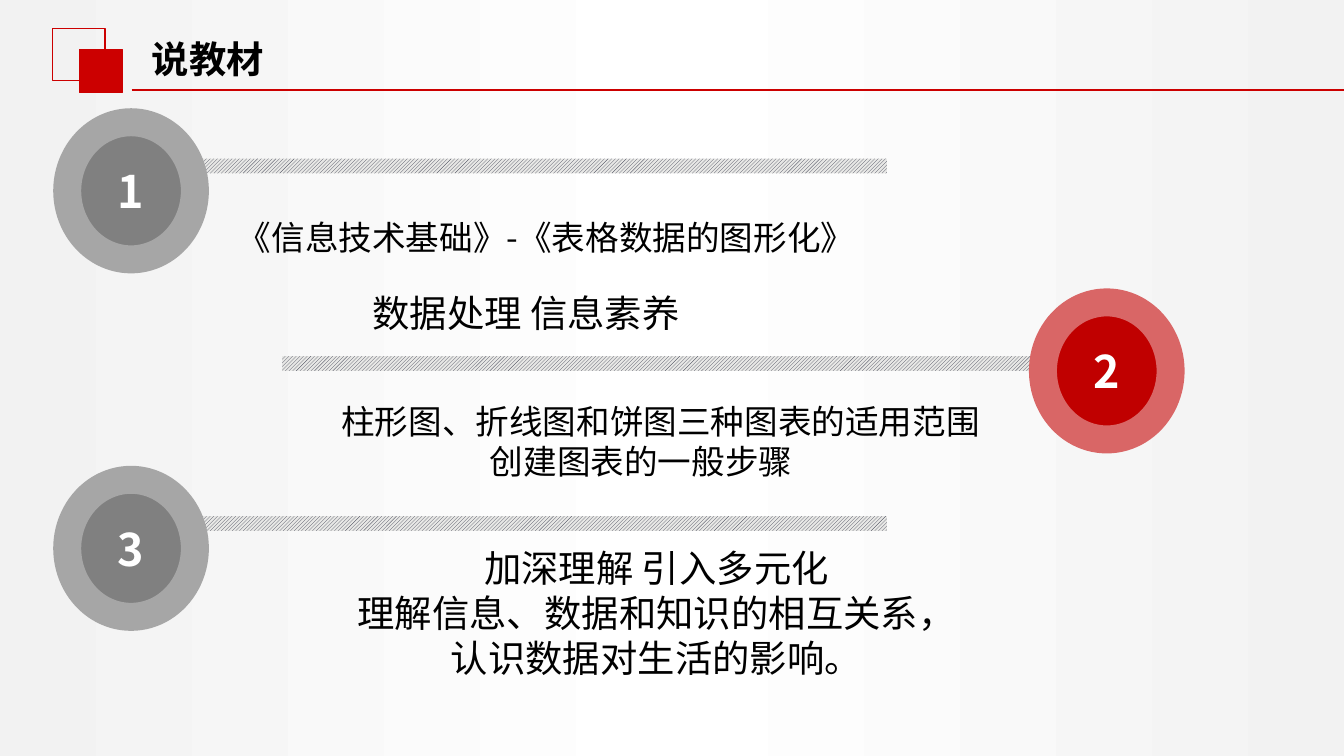
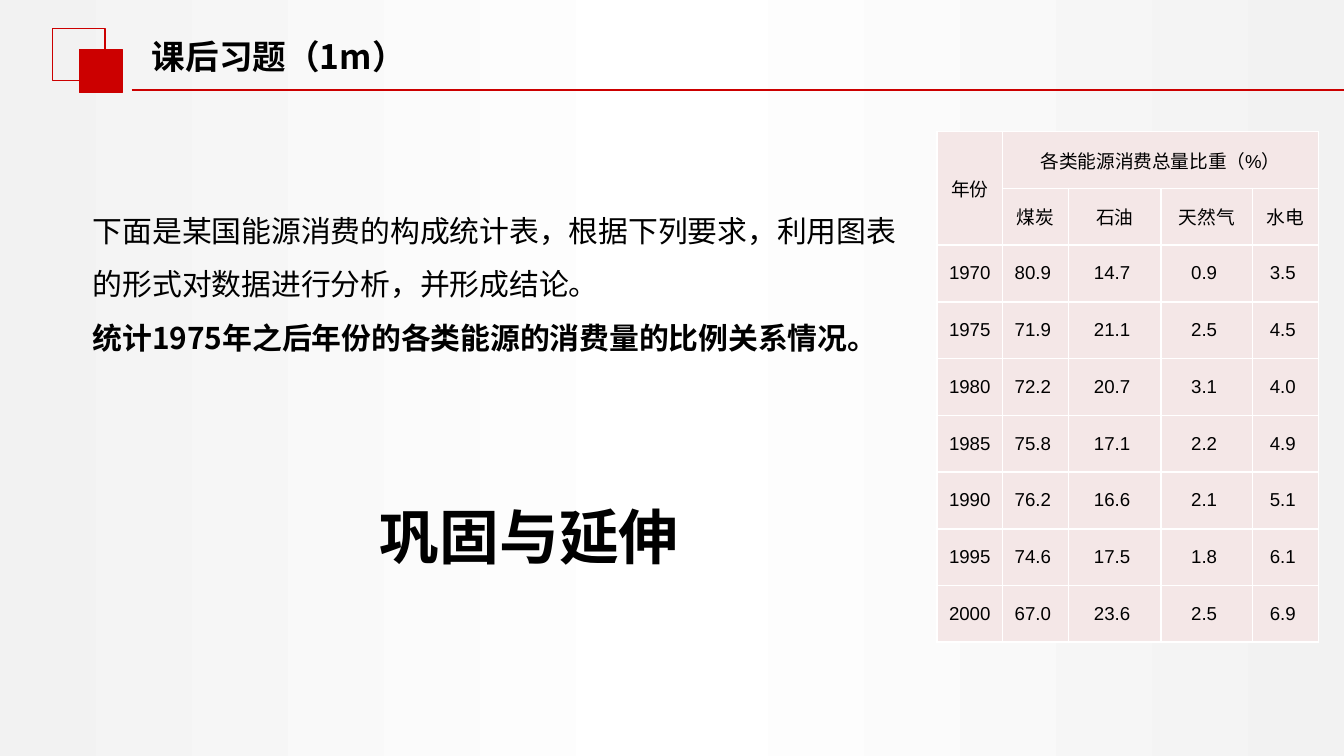
from copy import deepcopy

from lxml.etree import SubElement
from pptx import Presentation
from pptx.dml.color import RGBColor
from pptx.enum.dml import MSO_PATTERN
from pptx.enum.shapes import MSO_CONNECTOR, MSO_SHAPE
from pptx.enum.text import MSO_ANCHOR, MSO_AUTO_SIZE, PP_ALIGN
from pptx.oxml.ns import qn
from pptx.util import Inches, Pt

RED = RGBColor(0xCC, 0x00, 0x00)
DARK_RED = RGBColor(0xC0, 0x00, 0x00)
LIGHT_RED = RGBColor(0xD9, 0x66, 0x66)
GREY = RGBColor(0x80, 0x80, 0x80)
LIGHT_GREY = RGBColor(0xA6, 0xA6, 0xA6)
EDGE_GREY = RGBColor(0xF2, 0xF2, 0xF2)
STRIPE = RGBColor(0x41, 0x44, 0x55)
STRIPE_BACK = RGBColor(0xE8, 0xE8, 0xE6)
CELL_PINK = RGBColor(0xF4, 0xE7, 0xE7)
WHITE = RGBColor(0xFF, 0xFF, 0xFF)
BLACK = RGBColor(0x00, 0x00, 0x00)

SLIDE_WIDTH = 10
SLIDE_HEIGHT = SLIDE_WIDTH * 9 / 16

CJK_FONT = "Noto Sans CJK SC"
TABLE_FONT = "Arial"

ENERGY_ROWS = [
    ["年份", "各类能源消费总量比重（%）", "", "", ""],
    ["", "煤炭", "石油", "天然气", "水电"],
    ["1970", "80.9", "14.7", "0.9", "3.5"],
    ["1975", "71.9", "21.1", "2.5", "4.5"],
    ["1980", "72.2", "20.7", "3.1", "4.0"],
    ["1985", "75.8", "17.1", "2.2", "4.9"],
    ["1990", "76.2", "16.6", "2.1", "5.1"],
    ["1995", "74.6", "17.5", "1.8", "6.1"],
    ["2000", "67.0", "23.6", "2.5", "6.9"],
]
COLUMN_WIDTHS = [0.49, 0.49, 0.69, 0.68, 0.49]
TABLE_HEIGHT = 3.8
ROW_HEIGHT = TABLE_HEIGHT / len(ENERGY_ROWS)


def set_values(target, values):
    for name, value in values.items():
        setattr(target, name, value)


def box(left, top, width, height):
    return [Inches(value) for value in (left, top, width, height)]


def write_paragraph(paragraph, text, size, bold=False, color=BLACK, font=CJK_FONT,
                    left_indent=0, first_indent=0, **layout):
    run = paragraph.add_run()
    run.text = text
    set_values(run.font, {"size": Pt(size), "bold": bold, "name": font})
    run.font.color.rgb = color
    SubElement(run.font._element, qn("a:ea"), typeface=CJK_FONT)
    set_values(paragraph, {"alignment": PP_ALIGN.LEFT, "space_before": Pt(0), **layout})
    properties = paragraph._p.get_or_add_pPr()
    properties.set("marL", str(Inches(left_indent)))
    properties.set("indent", str(Inches(first_indent)))
    SubElement(properties, qn("a:buNone"))


def write_text(shape, paragraphs, anchor=MSO_ANCHOR.TOP, side=0.1, edge=0.05):
    frame = shape.text_frame
    set_values(frame, {
        "word_wrap": True,
        "auto_size": MSO_AUTO_SIZE.NONE,
        "vertical_anchor": anchor,
        "margin_left": Inches(side),
        "margin_right": Inches(side),
        "margin_top": Inches(edge),
        "margin_bottom": Inches(edge),
    })
    for index, values in enumerate(paragraphs):
        paragraph = frame.add_paragraph() if index else frame.paragraphs[0]
        write_paragraph(paragraph, **values)


def place(shape, position):
    set_values(shape, dict(zip(("left", "top", "width", "height"), box(*position))))


def add_text(slide, position, paragraphs, **frame_values):
    write_text(slide.shapes.add_textbox(*box(*position)), paragraphs, **frame_values)


def add_plain_shape(slide, kind, position, fill=None, line=None, line_width=0.75):
    shape = slide.shapes.add_shape(kind, *box(*position))
    shape.shadow.inherit = False
    if fill is None:
        shape.fill.background()
    else:
        shape.fill.solid()
        shape.fill.fore_color.rgb = fill
    if line is None:
        shape.line.fill.background()
    else:
        shape.line.color.rgb = line
        shape.line.width = Pt(line_width)
    return shape


def add_striped_bar(slide, left, top, width):
    bar = add_plain_shape(slide, MSO_SHAPE.RECTANGLE, (left, top, width, 0.11))
    bar.fill.patterned()
    bar.fill.pattern = MSO_PATTERN.LIGHT_UPWARD_DIAGONAL
    bar.fill.fore_color.rgb = STRIPE
    bar.fill.back_color.rgb = STRIPE_BACK


def add_number_badge(slide, number, left, top, fill, ring):
    badge = add_plain_shape(slide, MSO_SHAPE.OVAL, (left, top, 0.95, 1.02), fill, ring, 15)
    number_format = {"text": str(number), "size": 24, "bold": True, "color": WHITE,
                     "alignment": PP_ALIGN.CENTER}
    write_text(badge, [number_format], MSO_ANCHOR.MIDDLE, side=0.08, edge=0.04)


def add_header(slide, title, size, height):
    add_plain_shape(slide, MSO_SHAPE.RECTANGLE, (0.39, 0.21, 0.39, 0.39), line=RED)
    add_plain_shape(slide, MSO_SHAPE.RECTANGLE, (0.59, 0.37, 0.32, 0.32), RED, RED)
    rule = slide.shapes.add_connector(
        MSO_CONNECTOR.STRAIGHT, Inches(0.98), Inches(0.67), Inches(SLIDE_WIDTH), Inches(0.67))
    rule.line.color.rgb = RED
    rule.line.width = Pt(1.25)
    SubElement(rule._element.spPr, qn("a:effectLst"))
    place(slide.shapes.title, (1.06, 0.23, 3.84, height))
    write_text(slide.shapes.title, [{"text": title, "size": size, "bold": True}],
               side=0.07, edge=0.04)


def set_background(master):
    fill = master.background.fill
    fill.gradient()
    fill.gradient_angle = 0
    stop_list = master.element.find(".//" + qn("a:gsLst"))
    stop_list.append(deepcopy(stop_list[-1]))
    stops = zip(fill.gradient_stops, (0, 0.5, 1), (EDGE_GREY, WHITE, EDGE_GREY))
    for stop, position, color in stops:
        stop.position = position
        stop.color.rgb = color


def add_cell_borders(cell):
    properties = cell._tc.get_or_add_tcPr()
    for side in ("a:lnL", "a:lnR", "a:lnT", "a:lnB"):
        border = SubElement(properties, qn(side), w=str(Pt(1)))
        solid = SubElement(border, qn("a:solidFill"))
        SubElement(solid, qn("a:srgbClr"), val=str(WHITE))


def format_cell(cell, text):
    add_cell_borders(cell)
    cell.fill.solid()
    cell.fill.fore_color.rgb = CELL_PINK
    set_values(cell, {
        "vertical_anchor": MSO_ANCHOR.MIDDLE,
        "margin_left": Inches(0.06),
        "margin_right": Inches(0.1 if "." in text else 0.06),
        "margin_top": Inches(0.04),
        "margin_bottom": Inches(0.04),
    })
    if text:
        write_paragraph(cell.text_frame.paragraphs[0], text, 10, font=TABLE_FONT,
                        alignment=PP_ALIGN.CENTER)


def add_energy_table(slide, left, top):
    position = box(left, top, sum(COLUMN_WIDTHS), TABLE_HEIGHT)
    table = slide.shapes.add_table(len(ENERGY_ROWS), len(COLUMN_WIDTHS), *position).table
    set_values(table, {"first_row": False, "horz_banding": False})
    for column, width in zip(table.columns, COLUMN_WIDTHS):
        column.width = Inches(width)
    for row, texts in zip(table.rows, ENERGY_ROWS):
        row.height = Inches(ROW_HEIGHT)
        for cell, text in zip(row.cells, texts):
            format_cell(cell, text)
    table.cell(0, 0).merge(table.cell(1, 0))
    table.cell(0, 1).merge(table.cell(0, 4))


def build_textbook_slide(presentation):
    slide = presentation.slides.add_slide(presentation.slide_layouts[5])
    add_header(slide, "说教材", 20, 0.41)
    for left, top, width in ((1.46, 1.18, 5.14), (2.1, 2.65, 5.66), (1.46, 3.84, 5.14)):
        add_striped_bar(slide, left, top, width)
    badges = (
        (0.5, 0.91, GREY, LIGHT_GREY),
        (7.76, 2.25, DARK_RED, LIGHT_RED),
        (0.5, 3.57, GREY, LIGHT_GREY),
    )
    for number, badge in enumerate(badges, 1):
        add_number_badge(slide, number, *badge)
    add_text(slide, (1.69, 1.42, 5.91, 2.58), [
        {"text": "《信息技术基础》-《表格数据的图形化》", "size": 18, "line_spacing": 1.5},
        {"text": "数据处理 信息素养", "size": 20, "line_spacing": 1.5,
         "left_indent": 1, "space_before": Pt(6)},
    ], side=0.08, edge=0.04)
    centred = {"alignment": PP_ALIGN.CENTER, "first_indent": 0.29}
    add_text(slide, (2.1, 2.84, 5.34, 0.88), [
        {"text": "柱形图、折线图和饼图三种图表的适用范围创建图表的一般步骤", "size": 18, **centred},
    ], anchor=MSO_ANCHOR.MIDDLE)
    meaning_lines = ("加深理解 引入多元化", "理解信息、数据和知识的相互关系，", "认识数据对生活的影响。")
    add_text(slide, (2.1, 4, 5.28, 1.45),
             [{"text": text, "size": 20, **centred} for text in meaning_lines], edge=0.06)


def build_exercise_slide(presentation):
    slide = presentation.slides.add_slide(presentation.slide_layouts[1])
    add_header(slide, "课后习题（1m）", 18, 0.38)
    add_energy_table(slide, 6.97, 0.98)
    body = slide.placeholders[1]
    place(body, (0.59, 1.39, 6.38, 1.31))
    write_text(body, [
        {"text": "下面是某国能源消费的构成统计表，根据下列要求，利用图表的形式对数据进行分析，并形成结论。",
         "size": 16, "line_spacing": 1.5},
        {"text": "统计1975年之后年份的各类能源的消费量的比例关系情况。",
         "size": 16, "bold": True, "line_spacing": 1.5},
    ], anchor=MSO_ANCHOR.MIDDLE)
    add_text(slide, (1.46, 3.41, 4.96, 0.88), [
        {"text": "巩固与延伸", "size": 32, "bold": True, "line_spacing": 1.5,
         "alignment": PP_ALIGN.CENTER},
    ], side=0.07, edge=0.04)


def main():
    presentation = Presentation()
    set_values(presentation, {
        "slide_width": Inches(SLIDE_WIDTH),
        "slide_height": Inches(SLIDE_HEIGHT),
    })
    set_background(presentation.slide_master)
    build_textbook_slide(presentation)
    build_exercise_slide(presentation)
    presentation.save("out.pptx")


if __name__ == "__main__":
    main()
